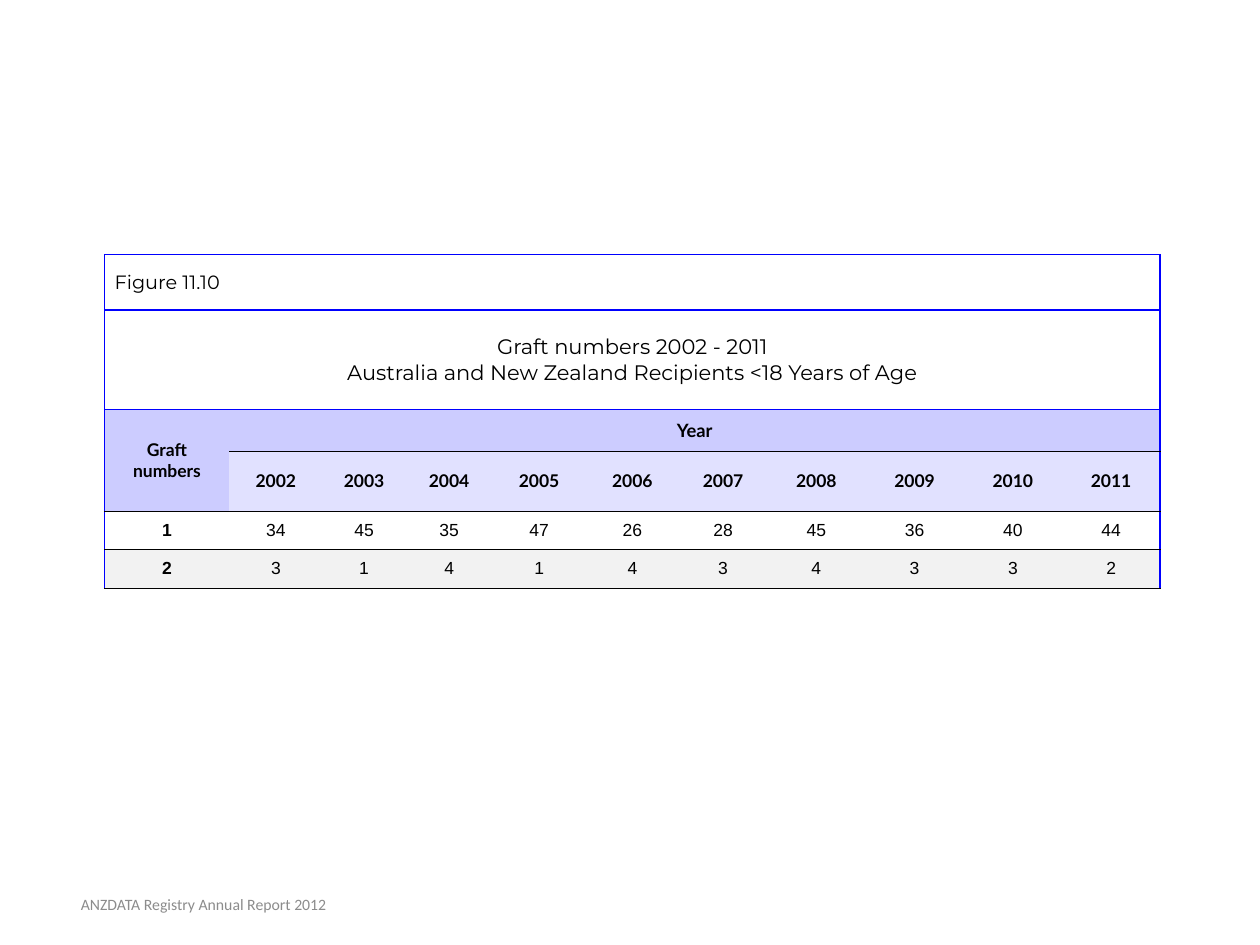
"""Build the slide with the table of graft numbers by year."""

import dataclasses
import typing

import lxml.etree
import pptx
import pptx.dml.color
import pptx.enum.text
import pptx.oxml.ns
import pptx.table
import pptx.util

Inches = pptx.util.Inches
Align = pptx.enum.text.PP_ALIGN


@dataclasses.dataclass(frozen=True)
class Style:
    font: str
    size: float
    bold: bool = False
    color: str = "000000"
    align: Align = Align.CENTER
    margin: float = 0.04


@dataclasses.dataclass(frozen=True)
class Rule:
    color: str
    width: float


@dataclasses.dataclass(frozen=True)
class Theme:
    frame: Rule = Rule("0000FF", 1)
    divider: Rule = Rule("000000", 0.5)
    header: str = "CCCCFF"
    years: str = "E1E1FF"
    band: str = "F2F2F2"
    caption: Style = Style("Montserrat", 11, align=Align.LEFT, margin=0.08)
    title: Style = Style("Montserrat", 12)
    corner: Style = Style("Lato", 10, bold=True)
    group: Style = Style("Lato", 10.5, bold=True)
    label: Style = Style("Arial", 10, bold=True)
    value: Style = Style("Arial", 10)
    footer: Style = Style("Calibri", 9, color="8C8C8C")


@dataclasses.dataclass(frozen=True)
class Entry:
    row: int
    column: int
    text: str
    style: Style
    fill: typing.Optional[str] = None
    rows: int = 1
    columns: int = 1


THEME = Theme()
COLUMN_WIDTHS = [0.99, 0.74, 0.66, 0.69, 0.74, 0.74, 0.7, 0.78, 0.78, 0.78, 0.78]
ROW_HEIGHTS = [0.44, 0.79, 0.33, 0.48, 0.3, 0.31]
GRAFTS = {
    "1": [34, 45, 35, 47, 26, 28, 45, 36, 40, 44],
    "2": [3, 1, 4, 1, 4, 3, 4, 3, 3, 2],
}
PLAIN_TABLE = "{2D5ABB26-0587-4C30-8999-92F81FD0307C}"


def write_text(frame: typing.Any, text: str, style: Style) -> None:
    """Fill a text frame and format its runs."""
    frame.word_wrap = True
    frame.text = text
    for para in frame.paragraphs:
        para.alignment = style.align
        for span in para.runs:
            span.font.name = style.font
            span.font.size = pptx.util.Pt(style.size)
            span.font.bold = style.bold
            span.font.color.rgb = pptx.dml.color.RGBColor.from_string(style.color)


def add_border(cell: pptx.table._Cell, side: str, rule: Rule) -> None:
    """Draw one side of a cell."""
    qn = pptx.oxml.ns.qn
    properties = cell._tc.get_or_add_tcPr()
    line = lxml.etree.SubElement(
        properties, qn(f"a:ln{side}"), w=str(pptx.util.Pt(rule.width))
    )
    solid = lxml.etree.SubElement(line, qn("a:solidFill"))
    lxml.etree.SubElement(solid, qn("a:srgbClr"), val=rule.color)


def draw_borders(table: pptx.table.Table) -> None:
    """Frame the table and rule off its rows."""
    last_row, last_column = len(ROW_HEIGHTS) - 1, len(COLUMN_WIDTHS) - 1
    tops = {0: THEME.frame, 1: THEME.frame, 2: THEME.divider,
            3: THEME.divider, 4: THEME.divider}
    for row in range(last_row + 1):
        for column in range(last_column + 1):
            cell = table.cell(row, column)
            reach = cell.span_width if cell.is_merge_origin else 1
            if column == 0:
                add_border(cell, "L", THEME.frame)
            if column + reach > last_column:
                add_border(cell, "R", THEME.frame)
            if row in tops and (row, column) != (3, 0):
                add_border(cell, "T", tops[row])
            if row == last_row:
                add_border(cell, "B", THEME.divider)


def fill_cell(table: pptx.table.Table, entry: Entry) -> None:
    """Write and colour one cell."""
    cell = table.cell(entry.row, entry.column)
    cell.vertical_anchor = pptx.enum.text.MSO_ANCHOR.MIDDLE
    margin = Inches(entry.style.margin)
    cell.margin_left = cell.margin_right = margin
    cell.margin_top = cell.margin_bottom = margin
    write_text(cell.text_frame, entry.text, entry.style)
    if entry.fill:
        cell.fill.solid()
        cell.fill.fore_color.rgb = pptx.dml.color.RGBColor.from_string(entry.fill)
    else:
        cell.fill.background()


def list_entries() -> list[Entry]:
    """List the cells of the table."""
    count = len(COLUMN_WIDTHS)
    title = "Graft numbers 2002 - 2011\vAustralia and New Zealand Recipients <18 Years of Age"
    entries = [
        Entry(0, 0, "Figure 11.10", THEME.caption, columns=count),
        Entry(1, 0, title, THEME.title, columns=count),
        Entry(2, 0, "Graft\nnumbers", THEME.corner, THEME.header, rows=2),
        Entry(2, 1, "Year", THEME.group, THEME.header, columns=count - 1),
    ]
    for column in range(1, count):
        entries.append(Entry(3, column, str(2001 + column), THEME.corner, THEME.years))
    for (label, values), row, fill in zip(GRAFTS.items(), (4, 5), (None, THEME.band)):
        entries.append(Entry(row, 0, label, THEME.label, fill))
        for column, value in enumerate(values, start=1):
            entries.append(Entry(row, column, str(value), THEME.value, fill))
    return entries


def add_graft_table(page: typing.Any) -> None:
    """Add the table of grafts by year."""
    holder = page.shapes.add_table(
        len(ROW_HEIGHTS), len(COLUMN_WIDTHS), Inches(0.83), Inches(2.02),
        Inches(sum(COLUMN_WIDTHS)), Inches(sum(ROW_HEIGHTS)),
    )
    table = holder.table
    table.first_row = table.horz_banding = False
    table._tbl.tblPr.find(pptx.oxml.ns.qn("a:tableStyleId")).text = PLAIN_TABLE
    for column, width in zip(table.columns, COLUMN_WIDTHS):
        column.width = Inches(width)
    for row, height in zip(table.rows, ROW_HEIGHTS):
        row.height = Inches(height)
    entries = list_entries()
    for entry in entries:
        if entry.rows * entry.columns > 1:
            end = table.cell(entry.row + entry.rows - 1, entry.column + entry.columns - 1)
            table.cell(entry.row, entry.column).merge(end)
    draw_borders(table)
    for entry in entries:
        fill_cell(table, entry)


def add_footer(page: typing.Any) -> None:
    """Add the report name at the foot of the page."""
    box = page.shapes.add_textbox(Inches(0.03), Inches(6.98), Inches(3.17), Inches(0.4))
    box.text_frame.vertical_anchor = pptx.enum.text.MSO_ANCHOR.MIDDLE
    write_text(box.text_frame, "ANZDATA Registry Annual Report 2012", THEME.footer)


def main() -> None:
    """Build and save the deck."""
    deck = pptx.Presentation()
    deck.slide_width, deck.slide_height = Inches(10), Inches(7.5)
    page = deck.slides.add_slide(deck.slide_layouts[6])
    add_graft_table(page)
    add_footer(page)
    deck.save("out.pptx")


if __name__ == "__main__":
    main()
